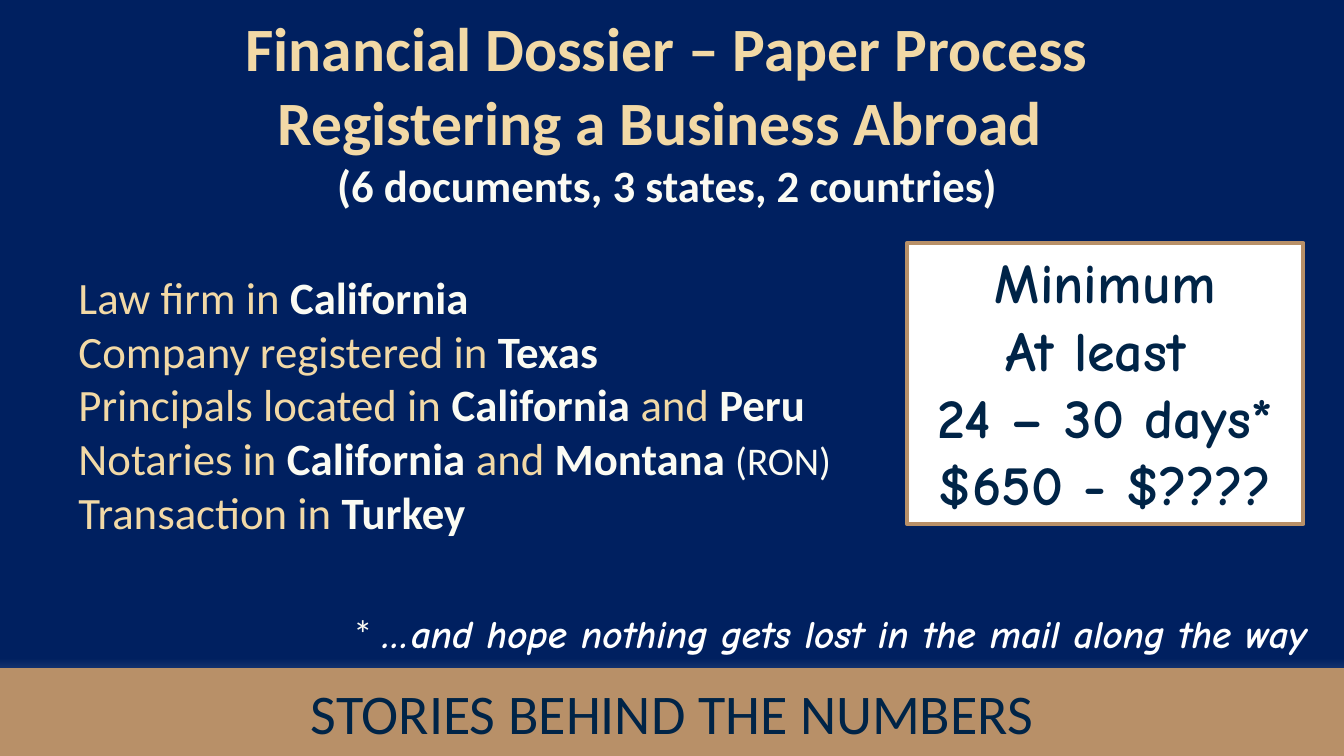
import pptx
import pptx.util
import pptx.dml.color
import pptx.enum.shapes
import pptx.enum.text

Pt = pptx.util.Pt
ALIGN = pptx.enum.text.PP_ALIGN
ANCHOR = pptx.enum.text.MSO_ANCHOR
RECTANGLE = pptx.enum.shapes.MSO_SHAPE.RECTANGLE
COLORS = {"navy": "002060", "pale": "C7D5ED", "bronze": "B89068", "ink": "002447",
          "gold": "F2D9A6", "cream": "FBFBF3", "white": "FFFFFF"}


def color(name):
    return pptx.dml.color.RGBColor.from_string(COLORS[name])


def write(box, lines, align, anchor=ANCHOR.TOP):
    """Each line is a list of (text, size, color, bold, italic, font) spans."""
    frame = box.text_frame
    frame.word_wrap = True
    frame.auto_size = pptx.enum.text.MSO_AUTO_SIZE.NONE
    frame.vertical_anchor = anchor
    for index, line in enumerate(lines):
        para = frame.add_paragraph() if index else frame.paragraphs[0]
        para.alignment = align
        for text, size, shade, bold, italic, font in line:
            span = para.add_run()
            span.text = text
            span.font.size = Pt(size)
            span.font.color.rgb = color(shade)
            span.font.bold = bold
            span.font.italic = italic
            span.font.name = font


deck = pptx.Presentation()
deck.slide_width, deck.slide_height = Pt(960), Pt(540)
page = deck.slides.add_slide(deck.slide_layouts[5])

# Background: navy that fades at the very bottom
backdrop = page.background.fill
backdrop.gradient()
backdrop.gradient_angle = 270
for stop, (name, position) in zip(backdrop.gradient_stops, [("navy", 0.87), ("pale", 1)]):
    stop.color.rgb = color(name)
    stop.position = position

# Title
title = page.shapes.title
title.left, title.top, title.width, title.height = Pt(13), Pt(3.6), Pt(927.4), Pt(154)
write(title, [
    [("Financial Dossier – Paper Process", 44, "gold", True, False, "Calibri")],
    [("Registering a Business Abroad ", 44, "gold", True, False, "Calibri")],
    [("(6 documents, 3 states, 2 countries)", 32, "cream", True, False, "Calibri")],
], ALIGN.CENTER)

# Parties and places: plain gold words, bold cream places
facts = [
    [("Law firm in ", "California")],
    [("Company registered in ", "Texas")],
    [("Principals located in ", "California"), (" and ", "Peru")],
    [("Notaries in ", "California"), (" and ", "Montana ")],
    [("Transaction in ", "Turkey")],
]
fact_lines = []
for fact in facts:
    line = []
    for words, place in fact:
        line.append((words, 32, "gold", False, False, "Calibri"))
        line.append((place, 32, "cream", True, False, "Calibri"))
    fact_lines.append(line)
fact_lines[3].append(("(RON)", 28, "cream", False, False, "Calibri"))
fact_box = page.shapes.add_textbox(Pt(49), Pt(189), Pt(590), Pt(203))
write(fact_box, fact_lines, ALIGN.LEFT)

# Bottom band and estimate panel
estimate = ["Minimum", "At least ", "24 – 30 days*", "$650 - $????"]
panels = [
    ((0, 477.4, 960, 62.6), "bronze", 1, ANCHOR.MIDDLE,
     [[("STORIES BEHIND THE NUMBERS", 40, "ink", False, False, "Calibri")]]),
    ((648, 173.5, 283, 200.9), "white", 3, ANCHOR.TOP,
     [[(text, 40, "ink", True, False, "Comic Neue")] for text in estimate]),
]
for place, fill, weight, anchor, lines in panels:
    panel = page.shapes.add_shape(RECTANGLE, *[Pt(length) for length in place])
    panel.shadow.inherit = False
    panel.fill.solid()
    panel.fill.fore_color.rgb = color(fill)
    panel.line.color.rgb = color("bronze")
    panel.line.width = Pt(weight)
    write(panel, lines, ALIGN.CENTER, anchor)

# Footnote
footnote = page.shapes.add_textbox(Pt(0), Pt(432), Pt(940.5), Pt(41))
write(footnote, [[
    ("* ", 28, "cream", False, False, "Calibri"),
    ("…and hope nothing gets lost in the mail along the way",
     28, "white", True, True, "Comic Neue"),
]], ALIGN.RIGHT)

deck.save("out.pptx")
